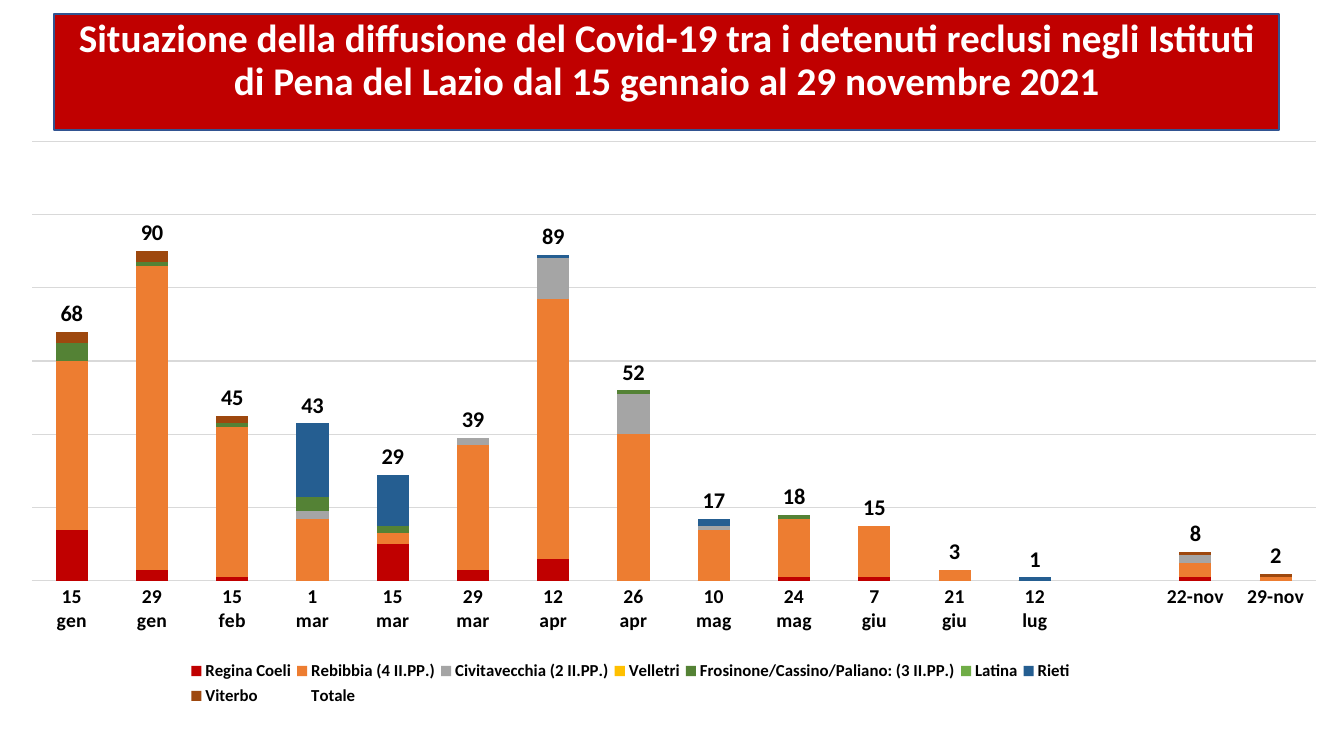
from dataclasses import dataclass

from lxml import etree
from pptx import Presentation, util as u
from pptx.chart.data import CategoryChartData
from pptx.dml.color import RGBColor
from pptx.enum import chart as c, text
from pptx.enum.shapes import MSO_SHAPE
from pptx.oxml.ns import qn

PX_PER_INCH = 100.8
FONT = "Calibri"
GRID = "D9D9D9"
BLACK = "000000"
TITLE = ("Situazione della diffusione del Covid-19 tra i detenuti reclusi "
         "negli Istituti di Pena del Lazio dal 15 gennaio al 29 novembre 2021")
DATES = ["15\ngen", "29\ngen", "15\nfeb", "1\nmar", "15\nmar", "29\nmar",
         "12\napr", "26\napr", "10\nmag", "24\nmag", "7\ngiu", "21\ngiu",
         "12\nlug", "", "22-nov", "29-nov"]
GAP_INDEX = DATES.index("")


@dataclass
class Prison:
    name: str
    color: str
    cases: dict[int, int]

    def values(self) -> list[int | None]:
        """Return one value per date, leaving the gap between periods empty."""
        return [None if i == GAP_INDEX else self.cases.get(i, 0)
                for i in range(len(DATES))]


PRISONS = [
    Prison("Regina Coeli", "C00000",
           {0: 14, 1: 3, 2: 1, 4: 10, 5: 3, 6: 6, 9: 1, 10: 1, 14: 1}),
    Prison("Rebibbia (4 II.PP.)", "ED7D31",
           {0: 46, 1: 83, 2: 41, 3: 17, 4: 3, 5: 34, 6: 71, 7: 40, 8: 14,
            9: 16, 10: 14, 11: 3, 14: 4, 15: 1}),
    Prison("Civitavecchia (2 II.PP.)", "A5A5A5",
           {3: 2, 5: 2, 6: 11, 7: 11, 8: 1, 14: 2}),
    Prison("Velletri", "FFC000", {}),
    Prison("Frosinone/Cassino/Paliano: (3 II.PP.)", "548235",
           {0: 5, 1: 1, 2: 1, 3: 4, 4: 2, 7: 1, 9: 1}),
    Prison("Latina", "70AD47", {}),
    Prison("Rieti", "255E91", {3: 20, 4: 14, 6: 1, 8: 2, 12: 1}),
    Prison("Viterbo", "9E480E", {0: 3, 1: 3, 2: 2, 14: 1, 15: 1}),
]


def px(length: int) -> int:
    """Convert pixels to EMU."""
    return u.Inches(length / PX_PER_INCH)


def rgb(color: str) -> RGBColor:
    """Convert a hex string to a colour."""
    return RGBColor.from_string(color)


def style_font(font, size: int, color: str, bold: bool = True) -> None:
    """Apply the slide's font."""
    font.name = FONT
    font.size = u.Pt(size)
    font.bold = bold
    font.color.rgb = rgb(color)


def style_line(line, color: str, width: float) -> None:
    """Apply a solid line."""
    line.color.rgb = rgb(color)
    line.width = u.Pt(width)


def set_layout(parent, index: int, inner: bool, **box: float) -> None:
    """Place a chart part at fractions of the chart area."""
    for old in parent.findall(qn("c:layout")):
        parent.remove(old)
    layout = etree.Element(qn("c:layout"))
    manual = etree.SubElement(layout, qn("c:manualLayout"))
    settings = {"layoutTarget": "inner"} if inner else {}
    settings |= {"xMode": "edge", "yMode": "edge", **box}
    for tag, value in settings.items():
        etree.SubElement(manual, qn(f"c:{tag}")).set("val", str(value))
    parent.insert(index, layout)


def add_title(slide) -> None:
    """Draw the red title banner."""
    shape = slide.shapes.add_shape(MSO_SHAPE.RECTANGLE,
                                   px(54), px(14), px(1225), px(116))
    shape.shadow.inherit = False
    shape.fill.solid()
    shape.fill.fore_color.rgb = rgb("C00000")
    style_line(shape.line, "325491", 1)
    frame = shape.text_frame
    frame.text = TITLE
    frame.word_wrap = True
    frame.vertical_anchor = text.MSO_ANCHOR.TOP
    paragraph = frame.paragraphs[0]
    paragraph.alignment = text.PP_ALIGN.CENTER
    paragraph.line_spacing = 0.9
    paragraph.space_before = u.Pt(10)
    style_font(paragraph.runs[0].font, 28, "FFFFFF")


def add_cases_chart(slide) -> None:
    """Draw the stacked columns with an invisible series carrying the totals."""
    data = CategoryChartData()
    data.categories = DATES
    for prison in PRISONS:
        data.add_series(prison.name, prison.values())
    columns = zip(*(prison.values() for prison in PRISONS))
    data.add_series("Totale", [None if None in column else sum(column)
                               for column in columns])
    chart = slide.shapes.add_chart(
        c.XL_CHART_TYPE.COLUMN_STACKED,
        px(10), px(129), px(1349), px(606), data).chart
    chart.has_title = False
    style_font(chart.font, 10, BLACK, bold=False)

    plot = chart.plots[0]
    plot.gap_width = 150
    plot.overlap = 100
    plot.vary_by_categories = False
    *prison_series, total = plot.series
    for series, prison in zip(prison_series, PRISONS):
        series.format.fill.solid()
        series.format.fill.fore_color.rgb = rgb(prison.color)
    total.format.fill.background()
    labels = total.data_labels
    labels.show_value = True
    labels.position = c.XL_LABEL_POSITION.INSIDE_BASE
    style_font(labels.font, 16, BLACK)

    dates = chart.category_axis
    dates.major_tick_mark = c.XL_TICK_MARK.NONE
    style_font(dates.tick_labels.font, 14, BLACK)
    style_line(dates.format.line, GRID, 0.75)
    cases = chart.value_axis
    cases.visible = False
    cases.minimum_scale, cases.maximum_scale, cases.major_unit = 0, 120, 20
    cases.has_major_gridlines = True
    style_line(cases.major_gridlines.format.line, GRID, 0.75)

    chart.has_legend = True
    legend = chart.legend
    legend.position = c.XL_LEGEND_POSITION.BOTTOM
    legend.include_in_layout = False
    style_font(legend.font, 12, BLACK)
    legend_xml = chart.element.find(".//" + qn("c:legend"))
    plot_xml = chart.element.find(".//" + qn("c:plotArea"))
    set_layout(legend_xml, 1, False, x=0.13, y=0.87, w=0.66, h=0.09)
    set_layout(plot_xml, 0, True, x=0.016, y=0.02, w=0.952, h=0.726)


def main() -> None:
    """Build and save the slide."""
    presentation = Presentation()
    presentation.slide_width = px(1344)
    presentation.slide_height = px(756)
    slide = presentation.slides.add_slide(presentation.slide_layouts[6])
    add_title(slide)
    add_cases_chart(slide)
    presentation.save("out.pptx")


if __name__ == "__main__":
    main()
